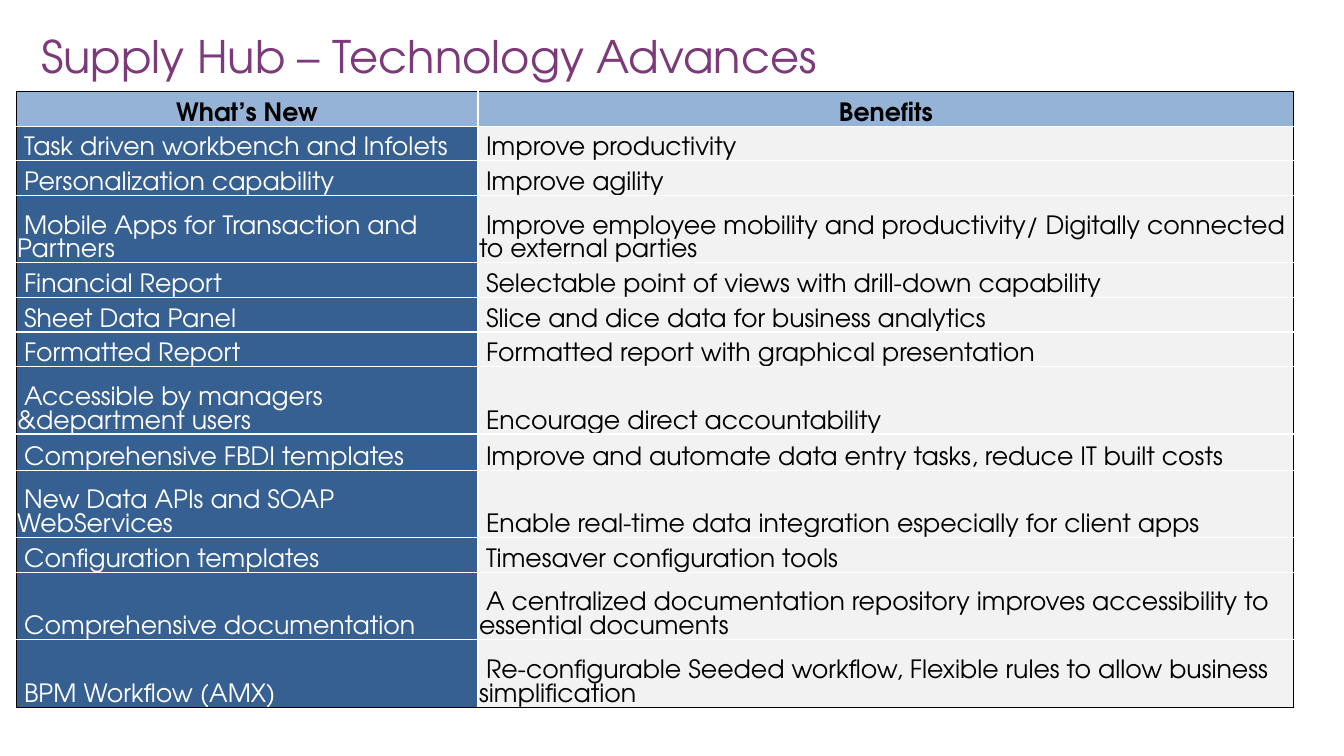
import pptx
import pptx.dml.color
import pptx.enum.text
import pptx.oxml
import pptx.oxml.ns
import pptx.util

Pt = pptx.util.Pt
FONT = "TeX Gyre Adventor"
BLACK, WHITE = "000000", "FFFFFF"


def color(value):
    return pptx.dml.color.RGBColor.from_string(value)


def add_border(cell, side, value):
    cell._tc.get_or_add_tcPr().append(pptx.oxml.parse_xml(
        f'<a:{side} {pptx.oxml.ns.nsdecls("a")} w="{Pt(1)}"><a:solidFill>'
        f'<a:srgbClr val="{value}"/></a:solidFill></a:{side}>'))


deck = pptx.Presentation()
deck.slide_width, deck.slide_height = Pt(960), Pt(540)
page = deck.slides.add_slide(deck.slide_layouts[6])

# Title
box = page.shapes.add_textbox(Pt(22.3), Pt(13), Pt(884), Pt(53.3))
frame = box.text_frame
frame.text = "Supply Hub – Technology Advances"
frame.word_wrap = True
frame.vertical_anchor = pptx.enum.text.MSO_ANCHOR.MIDDLE
font = frame.paragraphs[0].runs[0].font
font.name, font.size = FONT, Pt(32)
font.color.rgb = color("7C3A7A")

# Table content: new feature, benefit, row height
SINGLE, DOUBLE = 24.7, 48.2
rows = [
    ("What’s New", "Benefits", SINGLE),
    ("Task driven workbench and Infolets", "Improve productivity", SINGLE),
    ("Personalization capability", "Improve agility", SINGLE),
    ("Mobile Apps for Transaction and Partners",
     "Improve employee mobility and productivity/ Digitally connected to external parties", DOUBLE),
    ("Financial Report", "Selectable point of views with drill-down capability", SINGLE),
    ("Sheet Data Panel", "Slice and dice data for business analytics", SINGLE),
    ("Formatted Report", "Formatted report with graphical presentation", SINGLE),
    ("Accessible by managers &department users", "Encourage direct accountability", DOUBLE),
    ("Comprehensive FBDI templates",
     "Improve and automate data entry tasks, reduce IT built costs", 25.9),
    ("New Data APIs and SOAP WebServices",
     "Enable real-time data integration especially for client apps", DOUBLE),
    ("Configuration templates", "Timesaver configuration tools", SINGLE),
    ("Comprehensive documentation",
     "A centralized documentation repository improves accessibility to essential documents", DOUBLE),
    ("BPM Workflow (AMX)",
     "Re-configurable Seeded workflow, Flexible rules to allow business simplification", DOUBLE),
]
widths = [330, 582.5]
body_styles = [("376092", WHITE), ("F2F2F2", BLACK)]

# Table
table = page.shapes.add_table(len(rows), 2, Pt(11.5), Pt(65.5), Pt(sum(widths)),
                              Pt(sum(row[2] for row in rows))).table
for column, width in zip(table.columns, widths):
    column.width = Pt(width)

for row_index, (feature, benefit, height) in enumerate(rows):
    table.rows[row_index].height = Pt(height)
    header = row_index == 0
    last = row_index == len(rows) - 1
    for column_index, text in enumerate((feature, benefit)):
        cell = table.cell(row_index, column_index)
        fill, ink = ("95B3D7", BLACK) if header else body_styles[column_index]

        # Black outside edge, white inner lines
        for side, outer in (("lnL", column_index == 0), ("lnR", column_index == 1),
                            ("lnT", header), ("lnB", last)):
            add_border(cell, side, BLACK if outer else WHITE)
        cell.fill.solid()
        cell.fill.fore_color.rgb = color(fill)
        cell.vertical_anchor = pptx.enum.text.MSO_ANCHOR.BOTTOM
        cell.margin_left = cell.margin_right = cell.margin_top = Pt(0.7)
        cell.margin_bottom = 0

        para = cell.text_frame.paragraphs[0]
        para.text = text
        para.line_spacing = Pt(17.1)
        if header:
            para.alignment = pptx.enum.text.PP_ALIGN.CENTER
        else:
            properties = para._p.get_or_add_pPr()
            properties.set("marL", "0")
            properties.set("indent", str(Pt(5)))
        font = para.runs[0].font
        font.name, font.size, font.bold = FONT, Pt(18), header
        font.color.rgb = color(ink)

deck.save("out.pptx")
